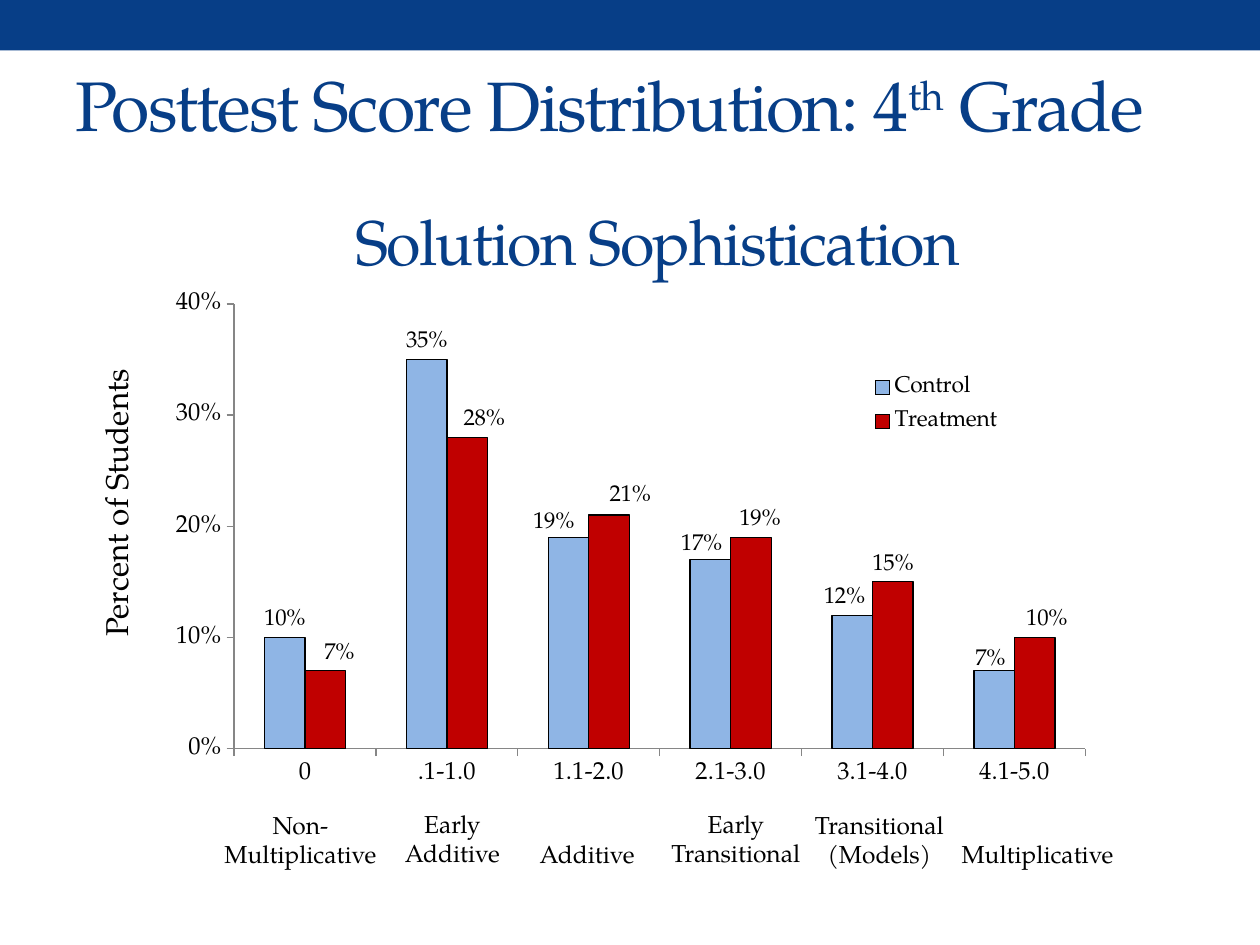
from lxml import etree
from pptx import Presentation
from pptx.chart.data import CategoryChartData
from pptx.dml.color import RGBColor
from pptx.enum.chart import XL_CHART_TYPE as ChartType, XL_LABEL_POSITION as LabelPosition
from pptx.enum.chart import XL_LEGEND_POSITION as LegendPosition, XL_TICK_MARK as TickMark
from pptx.enum.shapes import MSO_SHAPE as Shape
from pptx.enum.text import MSO_ANCHOR as Anchor, PP_ALIGN as Align
from pptx.oxml.ns import qn
from pptx.util import Inches, Pt

FONT = "TeX Gyre Pagella"
NAVY, BLACK, GRAY = "073E87", "000000", "868686"

CATEGORIES = ["0", ".1-1.0", "1.1-2.0", "2.1-3.0", "3.1-4.0", "4.1-5.0"]

# Name, colour, values, and label shifts (point: x, y) as fractions of the chart
SERIES = [
    ("Control", "8FB5E5", [0.10, 0.35, 0.19, 0.17, 0.12, 0.07],
     {2: (-0.015, 0.005), 3: (-0.009, 0.005), 4: (-0.008, 0), 5: (-0.004, 0.011)}),
    ("Treatment", "C00000", [0.07, 0.28, 0.21, 0.19, 0.15, 0.10],
     {0: (0.014, 0), 1: (0.017, 0), 2: (0.021, -0.004), 3: (0.009, 0), 5: (0.012, 0)}),
]

LEVELS = [
    ("Non-\nMultiplicative", 1.67, 6.38, 1.43),
    ("Early\nAdditive", 3.1, 6.37, 0.98),
    ("Additive", 4.17, 6.61, 0.98),
    ("Early\nTransitional", 5.22, 6.37, 1.24),
    ("Transitional\n(Models)", 6.36, 6.38, 1.24),
    ("Multiplicative", 7.52, 6.61, 1.43),
]


def color(code):
    return RGBColor.from_string(code)


def style_font(font, size, code=BLACK):
    font.name = FONT
    font.size = Pt(size)
    font.bold = False
    font.color.rgb = color(code)


def write(para, text, size=14, code=BLACK, spacing=None, baseline=None):
    """Add text to a paragraph, breaking the line at each newline."""
    for index, line in enumerate(text.split("\n")):
        if index:
            para.add_line_break()
        span = para.add_run()
        span.text = line
        style_font(span.font, size, code)
        properties = span._r.get_or_add_rPr()
        if spacing is not None:
            properties.set("spc", str(spacing * 100))
        if baseline is not None:
            properties.set("baseline", str(baseline * 1000))


def manual_layout(**values):
    layout = etree.Element(qn("c:layout"))
    manual = etree.SubElement(layout, qn("c:manualLayout"))
    for name, value in values.items():
        etree.SubElement(manual, qn(f"c:{name}")).set("val", str(value))
    return layout


def place(element, layout, after):
    """Put a layout behind the named child, replacing any earlier one."""
    for old in element.findall(qn("c:layout")):
        element.remove(old)
    if after is None:
        element.insert(0, layout)
    else:
        element.find(qn(after)).addnext(layout)


class SlideBuilder:
    def __init__(self, deck):
        self.page = deck.slides.add_slide(deck.slide_layouts[6])

    def band(self, left, top, width, height, fill):
        band = self.page.shapes.add_shape(
            Shape.RECTANGLE, Inches(left), Inches(top), Inches(width), Inches(height))
        band.shadow.inherit = False
        band.fill.solid()
        band.fill.fore_color.rgb = color(fill)
        band.line.fill.background()

    def text(self, text, left, top, width, height, align=Align.CENTER,
             anchor=Anchor.TOP, wrap=True, rotation=0, **style):
        box = self.page.shapes.add_textbox(
            Inches(left), Inches(top), Inches(width), Inches(height))
        box.rotation = rotation
        frame = box.text_frame
        frame.word_wrap = wrap
        frame.vertical_anchor = anchor
        para = frame.paragraphs[0]
        para.alignment = align
        write(para, text, **style)
        return para

    def chart(self, left, top, width, height):
        data = CategoryChartData(number_format="0%")
        data.categories = CATEGORIES
        for name, _, values, _ in SERIES:
            data.add_series(name, values)
        chart = self.page.shapes.add_chart(
            ChartType.COLUMN_CLUSTERED, Inches(left), Inches(top),
            Inches(width), Inches(height), data).chart
        chart.has_title = False
        style_font(chart.font, 10)
        place(chart._chartSpace.chart.plotArea, manual_layout(
            layoutTarget="inner", xMode="edge", yMode="edge",
            x=0.098, y=0.054, w=0.851, h=0.821), None)
        self.axes(chart)
        self.columns(chart.plots[0])
        self.legend(chart)

    def axes(self, chart):
        for axis in (chart.category_axis, chart.value_axis):
            axis.has_major_gridlines = False
            axis.major_tick_mark = TickMark.OUTSIDE
            axis.minor_tick_mark = TickMark.NONE
            axis.format.line.color.rgb = color(GRAY)
            axis.format.line.width = Pt(0.75)
            style_font(axis.tick_labels.font, 14)
        scale = chart.value_axis
        scale.minimum_scale, scale.maximum_scale, scale.major_unit = 0, 0.4, 0.1
        scale.tick_labels.number_format = "0%"
        scale.tick_labels.number_format_is_linked = False

    def columns(self, plot):
        plot.gap_width = 150
        plot.overlap = 0
        plot.vary_by_categories = False
        for series, (_, fill, _, shifts) in zip(plot.series, SERIES):
            series.format.fill.solid()
            series.format.fill.fore_color.rgb = color(fill)
            series.format.line.color.rgb = color(BLACK)
            series.format.line.width = Pt(0.75)
            labels = series.data_labels
            labels.show_value = True
            labels.number_format = "0%"
            labels.number_format_is_linked = False
            labels.position = LabelPosition.OUTSIDE_END
            style_font(labels.font, 13)
            for index, (x, y) in shifts.items():
                label = series.points[index].data_label
                style_font(label.font, 13)
                label.position = LabelPosition.OUTSIDE_END
                element = labels._element.xpath(f"c:dLbl[c:idx/@val='{index}']")[0]
                place(element, manual_layout(x=x, y=y), "c:idx")

    def legend(self, chart):
        chart.has_legend = True
        chart.legend.position = LegendPosition.RIGHT
        chart.legend.include_in_layout = False
        style_font(chart.legend.font, 13)
        place(chart.legend._element, manual_layout(
            xMode="edge", yMode="edge", x=0.73, y=0.166, w=0.14, h=0.148),
            "c:legendPos")


def main():
    deck = Presentation()
    deck.slide_width, deck.slide_height = Inches(10), Inches(7.5)
    slide = SlideBuilder(deck)
    slide.band(0, 0, 10, 0.4, NAVY)
    heading = {"size": 40, "code": NAVY, "spacing": -1}
    title = slide.text("Posttest Score Distribution: 4", 0.5, 0.28, 9, 1.08,
                       align=Align.LEFT, anchor=Anchor.MIDDLE, **heading)
    write(title, "th", baseline=30, **heading)
    write(title, " Grade", **heading)
    slide.chart(1.08, 2.18, 7.94, 4.3)
    slide.text("Solution Sophistication", 1.28, 1.37, 7.88, 1.08,
               anchor=Anchor.MIDDLE, size=36, code=NAVY, spacing=-1)
    slide.text("Percent of Students", -0.47, 3.79, 2.78, 0.4, rotation=270, size=18)
    for name, left, top, width in LEVELS:
        height = 0.57 if "\n" in name else 0.34
        slide.text(name, left, top, width, height, wrap=False)
    deck.save("out.pptx")


if __name__ == "__main__":
    main()
